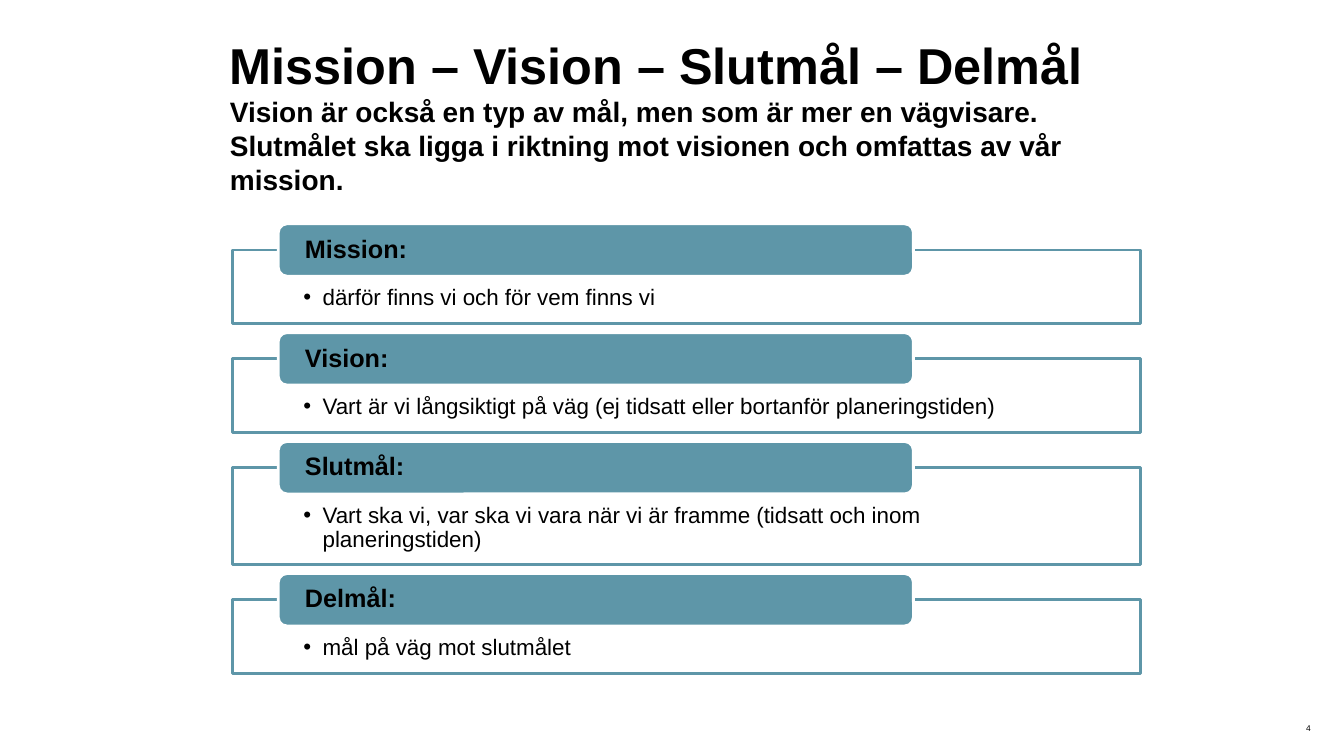
from lxml.etree import SubElement
from pptx import Presentation
from pptx.dml.color import RGBColor
from pptx.enum.shapes import MSO_SHAPE as Shape
from pptx.enum.text import MSO_ANCHOR as Anchor, MSO_AUTO_SIZE as AutoSize, PP_ALIGN as Align
from pptx.oxml.ns import qn
from pptx.util import Inches, Pt

TEAL = RGBColor(0x5E, 0x96, 0xA8)
WHITE = RGBColor(0xFF, 0xFF, 0xFF)
BLACK = RGBColor(0x00, 0x00, 0x00)
FONT = "Arial"

TITLE = "Mission – Vision – Slutmål – Delmål"
SUBTITLE = (
    "Vision är också en typ av mål, men som är mer en vägvisare. "
    "Slutmålet ska ligga i riktning mot visionen och omfattas av vår mission."
)
GOALS = [
    ("Mission:", "därför finns vi och för vem finns vi", 0.73),
    ("Vision:", "Vart är vi långsiktigt på väg (ej tidsatt eller bortanför planeringstiden)", 0.73),
    ("Slutmål:", "Vart ska vi, var ska vi vara när vi är framme (tidsatt och inom planeringstiden)", 0.96),
    ("Delmål:", "mål på väg mot slutmålet", 0.73),
]
FIRST_TOP = 2.48
GAP = 0.35
HEADING_RISE = 0.26


def add_span(para, text, size, bold=False):
    span = para.add_run()
    span.text = text
    span.font.name = FONT
    span.font.size = Pt(size)
    span.font.bold = bold
    span.font.color.rgb = BLACK


def set_frame(box, left, top, right, bottom, anchor=Anchor.TOP):
    frame = box.text_frame
    frame.word_wrap = True
    frame.auto_size = AutoSize.NONE
    frame.vertical_anchor = anchor
    frame.margin_left, frame.margin_top = Inches(left), Inches(top)
    frame.margin_right, frame.margin_bottom = Inches(right), Inches(bottom)
    para = frame.paragraphs[0]
    para.alignment = Align.LEFT
    return para


def add_bullet(para):
    props = para._p.get_or_add_pPr()
    props.set("marL", str(Inches(0.19)))
    props.set("indent", str(-Inches(0.19)))
    SubElement(props, qn("a:buFont")).set("typeface", FONT)
    SubElement(props, qn("a:buChar")).set("char", "•")


def add_box(page, kind, left, top, width, height, fill, line):
    box = page.shapes.add_shape(kind, Inches(left), Inches(top), Inches(width), Inches(height))
    box.shadow.inherit = False
    box.fill.solid()
    box.fill.fore_color.rgb = fill
    box.line.color.rgb = line
    box.line.width = Pt(2)
    return box


def add_goal(page, top, heading, detail, height):
    body = add_box(page, Shape.RECTANGLE, 2.31, top, 9, height, WHITE, TEAL)
    para = set_frame(body, 0.7, 0.36, 0.7, 0.12)
    add_bullet(para)
    para.line_spacing = 0.9
    add_span(para, detail, 16)

    label = add_box(page, Shape.ROUNDED_RECTANGLE, 2.76, top - HEADING_RISE, 6.3, 0.52, TEAL, WHITE)
    para = set_frame(label, 0.24, 0, 0.24, 0, Anchor.MIDDLE)
    para.line_spacing = 0.9
    add_span(para, heading, 18, bold=True)


def add_title(page):
    title = page.shapes.title
    title.left, title.top = Inches(2.18), Inches(0.29)
    title.width, title.height = Inches(9), Inches(0.85)
    para = set_frame(title, 0.1, 0.05, 0.1, 0.05)
    add_span(para, TITLE, 36, bold=True)
    para.add_line_break()
    add_span(para, SUBTITLE, 20, bold=True)


def add_page_number(page, number):
    box = page.shapes.add_textbox(Inches(12.33), Inches(7.17), Inches(0.67), Inches(0.1))
    para = set_frame(box, 0, 0, 0, 0)
    para.alignment = Align.RIGHT
    add_span(para, number, 6)


def main():
    deck = Presentation()
    deck.slide_width, deck.slide_height = Inches(13.33), Inches(7.5)
    page = deck.slides.add_slide(deck.slide_layouts.get_by_name("Title Only"))
    add_title(page)
    top = FIRST_TOP
    for heading, detail, height in GOALS:
        add_goal(page, top, heading, detail, height)
        top += height + GAP
    add_page_number(page, "4")
    deck.save("out.pptx")


if __name__ == "__main__":
    main()
